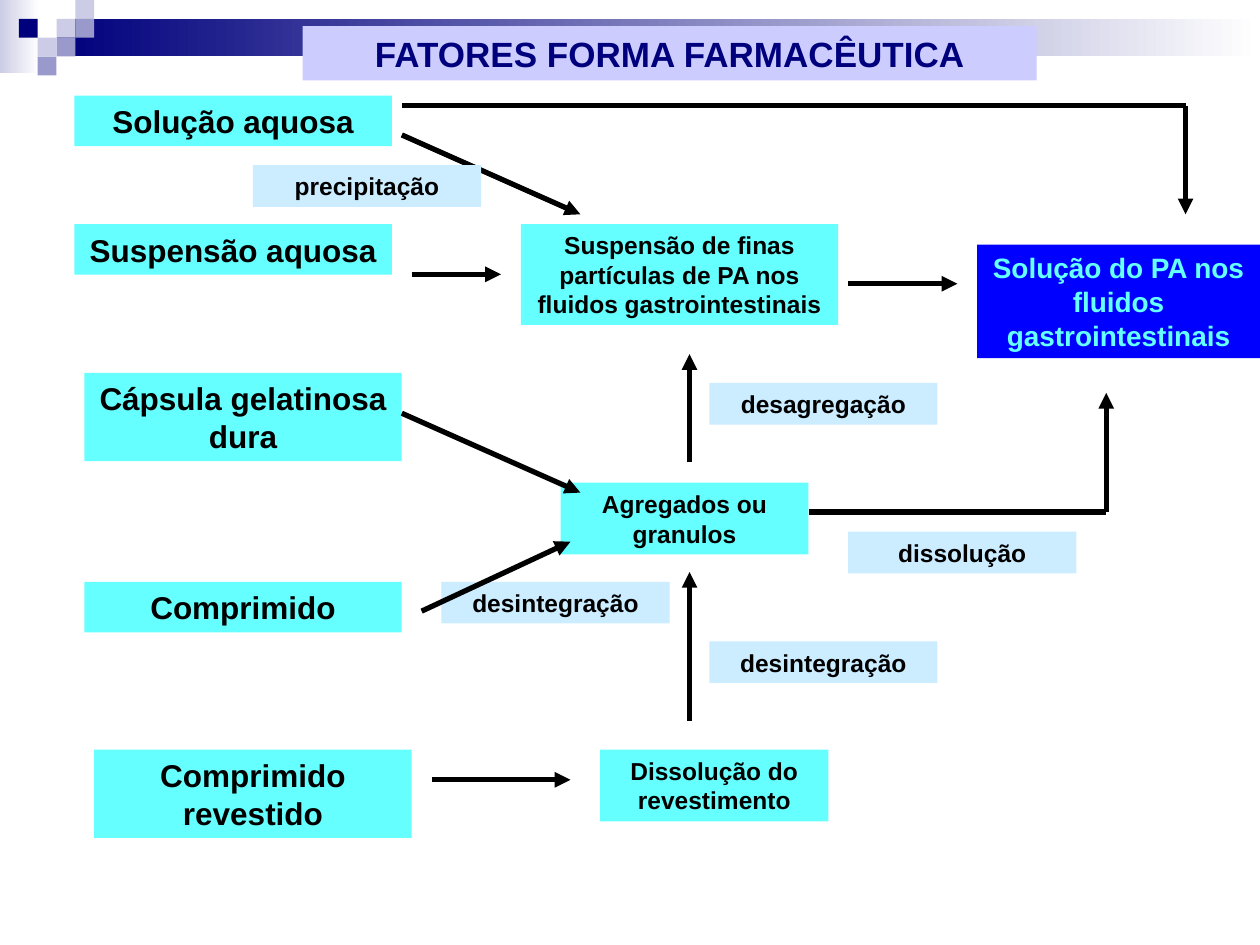
"""Build the slide on dosage form factors as a flow chart."""
from lxml.etree import SubElement as Sub
from pptx import Presentation
from pptx.dml.color import RGBColor as Rgb
from pptx.enum.shapes import MSO_CONNECTOR as Link, MSO_SHAPE as Form
from pptx.enum.text import MSO_ANCHOR as Anchor, PP_ALIGN as Align
from pptx.oxml.ns import qn
from pptx.util import Cm, Pt

HUES = {"navy": "00007D", "mist": "CCCCE6", "haze": "9999CC", "white": "FFFFFF",
        "aqua": "66FFFF", "blue": "0000FF", "pale": "CCECFF", "lilac": "CCCCFF",
        "black": "000000"}
FONT = {"name": "Arial", "bold": True}
FRAME = {"word_wrap": True, "vertical_anchor": Anchor.MIDDLE}
SIDE = 0.38

BARS = [((0, 0, 0.79, 1.47), "mist"), ((1.14, 0.38, 24.26, 0.76), "navy")]
TILES = [(3, 1, "mist"), (4, 0, "mist"), (4, 1, "haze"), (2, 2, "mist"),
         (1, 1, "navy"), (3, 2, "haze"), (2, 3, "haze")]

FORMS = [("Solução aquosa", 1.5, 1.93, 1.02), ("Suspensão aquosa", 1.5, 4.52, 1.02),
         ("Cápsula gelatinosa dura", 1.7, 7.52, 1.78), ("Comprimido", 1.7, 11.73, 1.02),
         ("Comprimido revestido", 1.9, 15.11, 1.78)]
STATES = [("Suspensão de finas partículas de PA nos fluidos gastrointestinais",
           (10.5, 4.52, 6.4, 2.03)),
          ("Agregados ou granulos", (11.3, 9.73, 5, 1.45)),
          ("Dissolução do revestimento", (12.1, 15.11, 4.6, 1.45))]
GOAL = ("Solução do PA nos fluidos gastrointestinais", (19.7, 4.93, 5.7, 2.29))
TITLE = ("FATORES FORMA FARMACÊUTICA", (6.1, 0.53, 14.8, 1.09))
STEPS = [("desintegração", 8.9, 11.73), ("dissolução", 17.1, 10.72),
         ("desintegração", 14.3, 12.93), ("desagregação", 14.3, 7.72),
         ("precipitação", 5.1, 3.33)]

ROUTES = [[(8.3, 5.53), (10.1, 5.53)], [(17.1, 5.72), (19.3, 5.72)],
          [(8.1, 8.33), (11.7, 9.93)], [(8.7, 15.72), (11.5, 15.72)],
          [(13.9, 14.53), (13.9, 11.53)], [(13.9, 9.32), (13.9, 7.14)],
          [(16.3, 10.32), (22.3, 10.32), (22.3, 7.92)],
          [(8.1, 2.13), (23.9, 2.13), (23.9, 4.32)],
          [(8.1, 2.72), (11.7, 4.32)]]
TABLET = [(8.5, 12.32), (11.5, 10.92)]


def tint(hue):
    return Rgb.from_string(HUES[hue])


def block(shapes, area, hue, fade=False):
    box = shapes.add_shape(Form.RECTANGLE, *map(Cm, area))
    box.shadow.inherit = False
    box.line.fill.background()
    if fade:
        box.fill.gradient()
        box.fill.gradient_angle = 0
        for stop, name in zip(box.fill.gradient_stops, (hue, "white")):
            stop.color.rgb = tint(name)
    else:
        box.fill.solid()
        box.fill.fore_color.rgb = tint(hue)
    return box


def label(shapes, text, area, hue, size, ink="black"):
    frame = block(shapes, area, hue).text_frame
    for key, val in FRAME.items():
        setattr(frame, key, val)
    para = frame.paragraphs[0]
    para.alignment = Align.CENTER
    run = para.add_run()
    run.text = text
    for key, val in {**FONT, "size": Pt(size)}.items():
        setattr(run.font, key, val)
    run.font.color.rgb = tint(ink)


def route(shapes, spots):
    for start, end in zip(spots, spots[1:]):
        wire = shapes.add_connector(Link.STRAIGHT, *map(Cm, start + end))
        wire.line.width = Pt(3)
        wire.line.color.rgb = tint("black")
        if end == spots[-1]:
            Sub(wire.line._get_or_add_ln(), qn("a:tailEnd"), type="triangle")
        Sub(wire._element.spPr, qn("a:effectLst"))


def main():
    deck = Presentation()
    deck.slide_width, deck.slide_height = Cm(25.4), Cm(19.05)
    shapes = deck.slides.add_slide(deck.slide_layouts[6]).shapes

    for area, hue in BARS:
        block(shapes, area, hue, fade=True)
    for col, row, hue in TILES:
        block(shapes, (col * SIDE, row * SIDE, SIDE, SIDE), hue)

    for text, left, top, high in FORMS:
        label(shapes, text, (left, top, 6.4, high), "aqua", 18)
    for text, area in STATES:
        label(shapes, text, area, "aqua", 14)
    label(shapes, *GOAL, "blue", 16, "aqua")

    for spots in ROUTES:
        route(shapes, spots)
    for text, left, top in STEPS:
        label(shapes, text, (left, top, 4.6, 0.84), "pale", 14)
    label(shapes, *TITLE, "lilac", 20, "navy")
    route(shapes, TABLET)

    deck.save("out.pptx")


if __name__ == "__main__":
    main()
